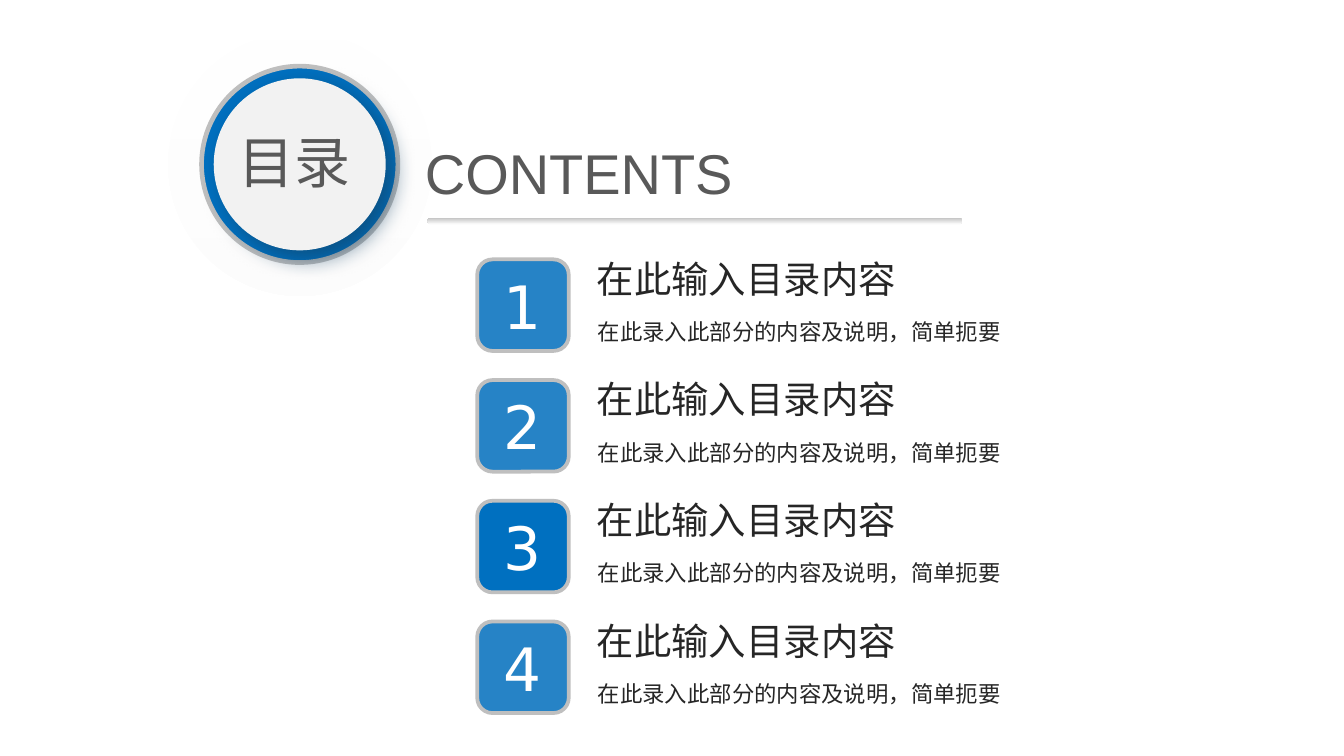
"""Build a contents slide with a round badge and four numbered entries."""
from lxml.etree import SubElement
from pptx import Presentation
from pptx.dml.color import RGBColor
from pptx.enum.shapes import MSO_SHAPE as Shape
from pptx.enum.text import MSO_ANCHOR as Anchor, MSO_AUTO_SIZE as AutoSize, PP_ALIGN as Align
from pptx.oxml import parse_xml
from pptx.oxml.ns import nsdecls, qn
from pptx.util import Cm, Pt

COLORS = {"blue": "0070C0", "sky": "2683C6", "silver": "BFBFBF", "pale": "F2F2F2",
          "white": "FFFFFF", "gray": "595959", "ink": "262626", "shade": "134163"}
COLORS = {name: RGBColor.from_string(value) for name, value in COLORS.items()}


def write(shape, text, font, size, color, align=Align.LEFT, anchor=Anchor.TOP,
          wrap=True, inset=(0.25, 0.13)):
    frame = shape.text_frame
    frame.word_wrap, frame.auto_size, frame.vertical_anchor = wrap, AutoSize.NONE, anchor
    frame.margin_left = frame.margin_right = Cm(inset[0])
    frame.margin_top = frame.margin_bottom = Cm(inset[1])
    para = frame.paragraphs[0]
    para.alignment = align
    span = para.add_run()
    span.text = text
    span.font.name, span.font.size = font, Pt(size)
    span.font.color.rgb = COLORS[color]
    SubElement(span.font._element, qn("a:ea"), typeface=font)


def draw(kind, left, top, width, height, fill, line=None, weight=0):
    shape = page.shapes.add_shape(kind, Cm(left), Cm(top), Cm(width), Cm(height))
    shape.shadow.inherit = False
    if isinstance(fill, tuple):
        shape.fill.gradient()
        shape.fill.gradient_angle = 270
        for stop, name in zip(shape.fill.gradient_stops, fill):
            stop.color.rgb = COLORS[name]
    else:
        shape.fill.solid()
        shape.fill.fore_color.rgb = COLORS[fill]
    if line:
        shape.line.color.rgb, shape.line.width = COLORS[line], Pt(weight)
    else:
        shape.line.fill.background()
    return shape


deck = Presentation()
deck.slide_width, deck.slide_height = Cm(25.4), Cm(14.28)
page = deck.slides.add_slide(deck.slide_layouts[5])

halo = draw(Shape.OVAL, 3.18, 0.61, 4.98, 4.98, ("white", "silver"))
for color in halo._element.spPr.iter(qn("a:srgbClr")):
    SubElement(color, qn("a:alpha"), val="3000")
draw(Shape.OVAL, 3.81, 1.25, 3.71, 3.71, "blue", "silver", 2.5)
disc = draw(Shape.OVAL, 4.04, 1.48, 3.25, 3.25, "pale")
disc._element.spPr.find(qn("a:effectLst")).append(parse_xml(
    f'<a:outerShdw {nsdecls("a")} blurRad="152400" dist="76200" dir="2700000" algn="tl">'
    f'<a:srgbClr val="{COLORS["shade"]}"><a:alpha val="64000"/></a:srgbClr></a:outerShdw>'))

title = page.shapes.title
title.left, title.top, title.width, title.height = Cm(7.85), Cm(2.51), Cm(8.84), Cm(1.47)
write(title, "CONTENTS", "Arial", 30, "gray", inset=(0.18, 0.1))
badge = page.shapes.add_textbox(Cm(3.81), Cm(2.31), Cm(3.53), Cm(1.47))
write(badge, "目录", "Quicksand", 30, "gray", Align.CENTER, inset=(0.18, 0.1))
rule = draw(Shape.ROUNDED_RECTANGLE, 8.08, 4.11, 10.11, 0.13, ("silver", "white"))
rule.adjustments[0] = 0.5

for index, fill in enumerate(["sky", "sky", "blue", "sky"]):
    top = 4.7 + 2.28 * index
    heading = page.shapes.add_textbox(Cm(11.03), Cm(top), Cm(6.22), Cm(1.12))
    write(heading, "在此输入目录内容", "Noto Sans CJK SC", 20, "ink", wrap=False)
    tile = draw(Shape.ROUNDED_RECTANGLE, 9.02, top + 0.2, 1.73, 1.73, fill, "silver", 2)
    write(tile, str(index + 1), "DejaVu Sans", 32, "white", Align.CENTER, Anchor.MIDDLE)
    detail = page.shapes.add_textbox(Cm(11.05), Cm(top + 1.18), Cm(8.2), Cm(0.76))
    write(detail, "在此录入此部分的内容及说明，简单扼要", "Noto Sans CJK SC", 12, "ink", wrap=False)

deck.save("out.pptx")
